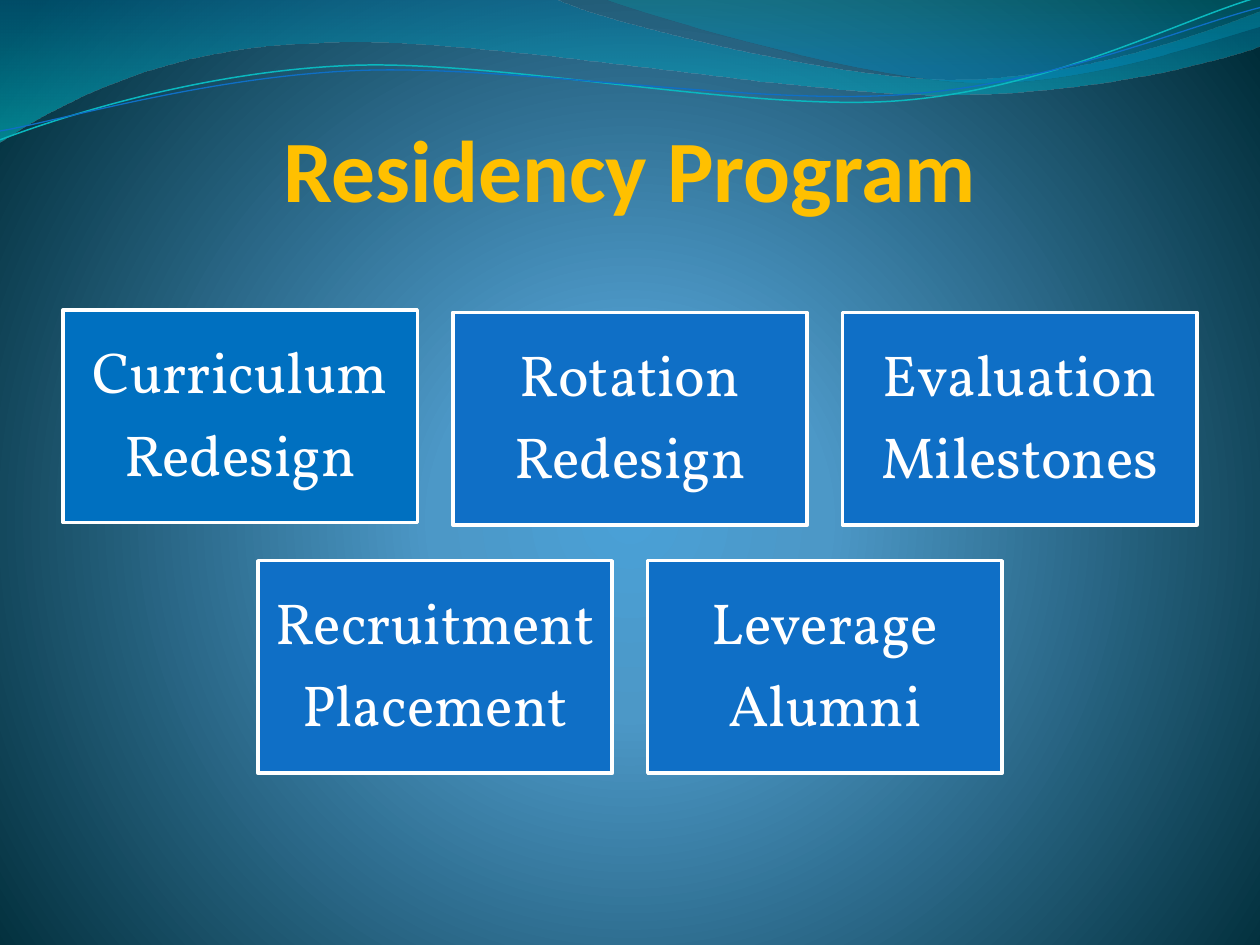
import math
from dataclasses import dataclass

from lxml import etree
from pptx import Presentation
from pptx import util as u
from pptx.dml.color import RGBColor
from pptx.enum import shapes, text
from pptx.oxml.ns import qn


@dataclass(frozen=True)
class Theme:
    title_font: str = "Calibri"
    body_font: str = "Vollkorn"
    title_size: float = 50
    body_size: float = 33
    gold: str = "FFC000"
    white: str = "FFFFFF"
    blue: str = "0F6FC6"
    first_blue: str = "0070C0"
    teal: str = "0AB8BF"
    backdrop: tuple = ((0, "4AA0D6", 100), (25, "4C98C7", 100), (100, "002C38", 100))
    wide_wave: tuple = ((0, "0074A1", 45), (100, "00C6CF", 55))
    corner_wave: tuple = ((0, "00A1A9", 30), (80, "008BBF", 45))


THEME = Theme()
SLIDE_WIDTH = 10
BOX_WIDTH = 9 / 3.2
BOX_HEIGHT = BOX_WIDTH * 0.6
GAP = BOX_WIDTH * 0.1
STRAND_TILT = -2.7
STRAND_CENTER = (4.99, 0.58)
ROWS = [
    (2.48, [("Curriculum", "Redesign"), ("Rotation", "Redesign"), ("Evaluation", "Milestones")]),
    (4.45, [("Recruitment", "Placement"), ("Leverage", "Alumni")]),
]

WIDE_WAVE = [
    [(0, 0)], [(4.4, -0.01)],
    [(4.76, 0.17), (6.64, 0.63), (7.58, 0.63)],
    [(8.53, 0.63), (9.58, 0.26), (10, 0.09)],
    [(10.01, 0.36)],
    [(9.83, 0.44), (8.7, 0.76), (7.46, 0.75)],
    [(6.22, 0.75), (3.82, 0.28), (2.57, 0.34)],
    [(1.29, 0.36), (0.46, 0.83), (-0.01, 1.13)],
]
CORNER_WAVE = [
    [(4.79, -0.01)],
    [(5.09, 0.11), (6.82, 0.62), (7.69, 0.65)],
    [(8.56, 0.69), (9.61, 0.32), (10, 0.21)],
    [(10, 0)],
]
TEAL_STRAND = [
    [(0, 1.11)],
    [(0.48, 0.93), (1.58, 0.57), (2.77, 0.52)],
    [(3.95, 0.47), (5.93, 0.89), (7.13, 0.8)],
    [(8.33, 0.71), (9.38, 0.15), (9.98, -0.02)],
]
BLUE_STRAND = [
    [(0, 1.04)],
    [(0.47, 0.96), (1.64, 0.61), (2.83, 0.56)],
    [(4.03, 0.51), (5.97, 0.84), (7.17, 0.75)],
    [(8.36, 0.67), (9.41, 0.21), (10, 0.06)],
]


def rgb(color):
    return RGBColor.from_string(color)


def set_gradient(fill, owner, stops, focus=None):
    fill.gradient()
    gradient = next(owner.iter(qn("a:gradFill")))
    for child in list(gradient):
        gradient.remove(child)
    stop_list = etree.SubElement(gradient, qn("a:gsLst"))
    for position, color, opacity in stops:
        stop = etree.SubElement(stop_list, qn("a:gs"), pos=str(position * 1000))
        tint = etree.SubElement(stop, qn("a:srgbClr"), val=color)
        if opacity < 100:
            etree.SubElement(tint, qn("a:alpha"), val=str(opacity * 1000))
    if focus:
        radial = etree.SubElement(gradient, qn("a:path"), {"path": "circle"})
        edges = {side: str(value * 1000) for side, value in zip("ltrb", focus)}
        etree.SubElement(radial, qn("a:fillToRect"), edges)
    else:
        etree.SubElement(gradient, qn("a:lin"), ang="5400000", scaled="0")


def rotate(point, degrees):
    angle = math.radians(degrees)
    center_x, center_y = STRAND_CENTER
    x, y = point[0] - center_x, point[1] - center_y
    return (center_x + x * math.cos(angle) - y * math.sin(angle),
            center_y + x * math.sin(angle) + y * math.cos(angle))


def add_outline(page, segments, close):
    segments = [[(u.Inches(x), u.Inches(y)) for x, y in segment] for segment in segments]
    anchors = [segment[-1] for segment in segments]
    builder = page.shapes.build_freeform(*anchors[0])
    builder.add_line_segments(anchors[1:], close=close)
    outline = builder.convert_to_shape()
    outline.shadow.inherit = False
    left, top = (min(values) for values in zip(*anchors))
    sides = list(outline.element.spPr.iter(qn("a:lnTo")))
    for side, segment in zip(sides, segments[1:]):
        if len(segment) == 3:
            curve = etree.Element(qn("a:cubicBezTo"))
            for x, y in segment:
                etree.SubElement(curve, qn("a:pt"), x=str(x - left), y=str(y - top))
            side.getparent().replace(side, curve)
    return outline


def add_wave(page, segments, stops):
    wave = add_outline(page, segments, close=True)
    set_gradient(wave.fill, wave.element.spPr, stops)
    wave.line.fill.background()


def add_strand(page, segments, color, width):
    level = [[rotate(point, -STRAND_TILT) for point in segment] for segment in segments]
    strand = add_outline(page, level, close=False)
    strand.rotation = STRAND_TILT
    strand.fill.background()
    strand.line.color.rgb = rgb(color)
    strand.line.width = u.Pt(width)


def write_text(box, lines, *, font, size, color, bold=False, anchor, insets,
               line_spacing=1.0, space_after=0):
    frame = box.text_frame
    frame.word_wrap = True
    frame.vertical_anchor = anchor
    (frame.margin_left, frame.margin_top,
     frame.margin_right, frame.margin_bottom) = map(u.Inches, insets)
    for index, line in enumerate(lines):
        para = frame.add_paragraph() if index else frame.paragraphs[0]
        para.alignment = text.PP_ALIGN.CENTER
        para.line_spacing = line_spacing
        para.space_after = u.Pt(space_after)
        span = para.add_run()
        span.text = line
        span.font.name = font
        span.font.size = u.Pt(size)
        span.font.bold = bold
        span.font.color.rgb = rgb(color)


def add_title(page, title):
    box = page.shapes.add_textbox(*map(u.Inches, (0.5, 0.5, 9, 1.25)))
    write_text(box, [title], font=THEME.title_font, size=THEME.title_size,
               color=THEME.gold, bold=True, anchor=text.MSO_ANCHOR.BOTTOM,
               insets=(0, 0.05, 0, 0))


def add_topic(page, left, top, lines, color):
    box = page.shapes.add_shape(
        shapes.MSO_SHAPE.RECTANGLE,
        *map(u.Inches, (left, top, BOX_WIDTH, BOX_HEIGHT)))
    box.shadow.inherit = False
    box.fill.solid()
    box.fill.fore_color.rgb = rgb(color)
    box.line.color.rgb = rgb(THEME.white)
    box.line.width = u.Pt(2)
    write_text(box, lines, font=THEME.body_font, size=THEME.body_size,
               color=THEME.white, anchor=text.MSO_ANCHOR.MIDDLE,
               insets=(0.13, 0.14, 0.13, 0.14), line_spacing=0.9,
               space_after=THEME.body_size * 0.35)


def add_topics(page):
    for row, (top, topics) in enumerate(ROWS):
        row_width = len(topics) * (BOX_WIDTH + GAP) - GAP
        start = (SLIDE_WIDTH - row_width) / 2
        for column, lines in enumerate(topics):
            is_first = row == column == 0
            add_topic(page, start + column * (BOX_WIDTH + GAP),
                      top - 0.02 if is_first else top, lines,
                      THEME.first_blue if is_first else THEME.blue)


def main():
    deck = Presentation()
    deck.slide_width, deck.slide_height = u.Inches(SLIDE_WIDTH), u.Inches(7.5)
    page = deck.slides.add_slide(deck.slide_layouts[6])
    set_gradient(page.background.fill, page.element, THEME.backdrop,
                 focus=(10, 110, 10, 100))
    add_wave(page, WIDE_WAVE, THEME.wide_wave)
    add_wave(page, CORNER_WAVE, THEME.corner_wave)
    add_strand(page, TEAL_STRAND, THEME.teal, 0.85)
    add_strand(page, BLUE_STRAND, THEME.blue, 0.75)
    add_title(page, "Residency Program")
    add_topics(page)
    deck.save("out.pptx")


if __name__ == "__main__":
    main()
